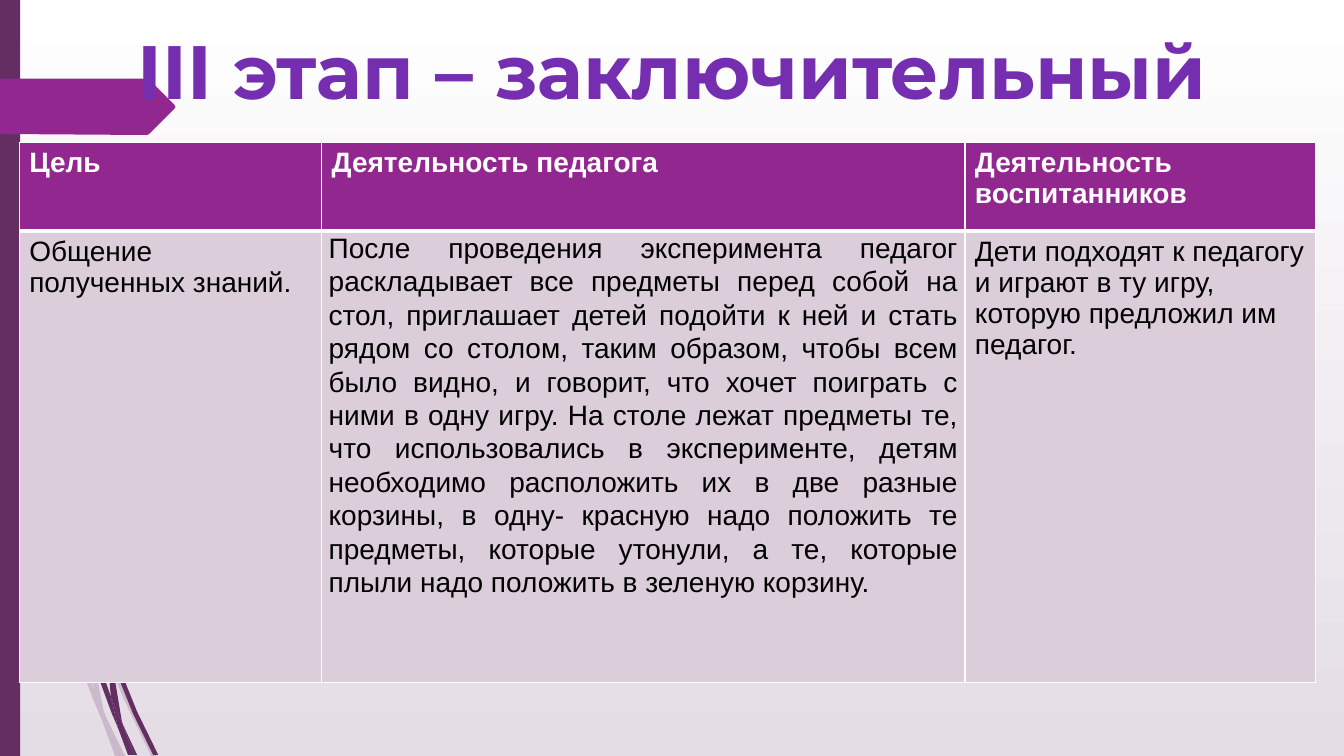
import pptx
import pptx.dml.color
import pptx.enum.shapes
import pptx.enum.text
import pptx.oxml
import pptx.oxml.ns
import pptx.util
from pptx.util import Inches

PLUM, MAGENTA, LILAC, WHITE = "632E62", "92278F", "DCCDDB", "FFFFFF"


def paint(fill, color, alpha=None):
    fill.solid()
    fill.fore_color.rgb = pptx.dml.color.RGBColor.from_string(color)
    if alpha:
        clr = fill._xPr.find(".//" + pptx.oxml.ns.qn("a:srgbClr"))
        clr.append(pptx.oxml.parse_xml(
            f'<a:alpha {pptx.oxml.ns.nsdecls("a")} val="{alpha * 1000}"/>'))


def write(tf, text, size=20, font="Arial", color="000000", bold=False,
          align="LEFT", spacing=None):
    tf.word_wrap = True
    p = tf.paragraphs[0]
    p.alignment = getattr(pptx.enum.text.PP_ALIGN, align)
    if spacing:
        p.line_spacing = spacing
    r = p.add_run()
    r.text = text
    r.font.size = pptx.util.Pt(size)
    r.font.name = font
    r.font.bold = bold
    paint(r.font.fill, color)


prs = pptx.Presentation()
prs.slide_width, prs.slide_height = Inches(13.33), Inches(7.5)
s = prs.slides.add_slide(prs.slide_layouts[6])

bg = s.background.fill
bg.gradient()
bg.gradient_angle = 270
for stop, color in zip(bg.gradient_stops, (WHITE, "E4DDE6")):
    stop.color.rgb = pptx.dml.color.RGBColor.from_string(color)

light_stems = [
    [(0.92, 6.07), (0.88, 5.96), (0.88, 6.1), (1.23, 6.94), (1.5, 7.5), (1.55, 7.5), (1.27, 6.92)],
    [(1.19, 7.5), (1.24, 7.5), (1.05, 7.11)],
    [(0.93, 6.83), (0.7, 6.19), (0.31, 4.69), (0.17, 3.76), (0.11, 3.5), (0.28, 4.7),
     (0.65, 6.21), (0.92, 6.93), (1.01, 7.14), (0.99, 7.07)],
    [(0.84, 5.99), (0.87, 6.46), (0.93, 6.83), (0.96, 6.92), (1.05, 7.11), (1.03, 7.06),
     (0.91, 6.46), (0.88, 6.1), (0.88, 6.08)],
    [(1.01, 7.14), (1.14, 7.5), (1.19, 7.5)],
    [(0.96, 6.92), (0.93, 6.83), (0.99, 7.07), (1.01, 7.14), (1.19, 7.5), (1.05, 7.11)],
]
dark_stems = [
    [(1.13, 6.49), (1.1, 6.41), (1.11, 6.56), (1.32, 7.08), (1.52, 7.49), (1.57, 7.49), (1.36, 7.06)],
    [(0.57, 4.77), (0.68, 5.57), (0.93, 6.59), (1.11, 7.08), (1.17, 7.22), (1.16, 7.17),
     (1.1, 6.91), (0.98, 6.57), (0.72, 5.56), (0.64, 5.05)],
    [(1.33, 7.49), (1.36, 7.49), (1.22, 7.19)],
    [(1.17, 7.22), (1.27, 7.49), (1.31, 7.49)],
    [(1.06, 6.45), (1.1, 6.91), (1.16, 7.06), (1.22, 7.19), (1.21, 7.16), (1.11, 6.56), (1.09, 6.51)],
    [(1.16, 7.06), (1.1, 6.91), (1.16, 7.17), (1.17, 7.22), (1.3, 7.49), (1.33, 7.49), (1.22, 7.19)],
]
side_bar = [(0, 0), (0.2, 0), (0.2, 7.5), (0, 7.5)]
arrow = [(0, 0.78), (1.46, 0.78), (1.48, 0.79), (1.73, 1.04), (1.74, 1.06), (1.73, 1.08),
         (1.48, 1.33), (1.46, 1.34), (0, 1.33)]

outlines = [(stem, PLUM, 20) for stem in light_stems]
outlines += [(stem, PLUM, None) for stem in dark_stems]
outlines.append((arrow, MAGENTA, None))
for points, color, alpha in outlines:
    (x, y), *rest = [(Inches(px), Inches(py)) for px, py in points]
    builder = s.shapes.build_freeform(x, y)
    builder.add_line_segments(rest, close=True)
    sp = builder.convert_to_shape()
    sp.shadow.inherit = False
    sp.line.fill.background()
    paint(sp.fill, color, alpha)

bar = s.shapes.add_shape(pptx.enum.shapes.MSO_SHAPE.RECTANGLE, 0, 0, Inches(0.2), Inches(7.5))
bar.shadow.inherit = False
bar.line.fill.background()
paint(bar.fill, PLUM)
s.shapes._spTree.remove(sp._element)
s.shapes._spTree.append(sp._element)

title = s.shapes.add_textbox(Inches(0.19), Inches(0.19), Inches(12.95), Inches(1.23))
write(title.text_frame, "III этап – заключительный", size=54, font="Montserrat",
      color="762EB1", bold=True, align="CENTER")

rows = [
    ["Цель", "Деятельность педагога", "Деятельность воспитанников"],
    ["Общение полученных знаний.",
     "После проведения эксперимента педагог раскладывает все предметы перед собой на стол, "
     "приглашает детей подойти к ней и стать рядом со столом, таким образом, чтобы всем было "
     "видно, и говорит, что хочет поиграть с ними в одну игру. На столе лежат предметы те, что "
     "использовались в эксперименте, детям необходимо расположить их в две разные корзины, в "
     "одну- красную надо положить те предметы, которые утонули, а те, которые плыли надо "
     "положить в зеленую корзину.",
     "Дети подходят к педагогу и играют в ту игру, которую предложил им педагог."],
]
table = s.shapes.add_table(2, 3, Inches(0.19), Inches(1.41), Inches(12.86), Inches(5.36)).table
table.horz_banding = False
for column, width in zip(table.columns, (3, 6.38, 3.48)):
    column.width = Inches(width)
for row, height in zip(table.rows, (0.88, 4.48)):
    row.height = Inches(height)

for i, texts in enumerate(rows):
    header = i == 0
    for j, text in enumerate(texts):
        cell = table.cell(i, j)
        story = not header and j == 1
        if story:
            cell.margin_left = cell.margin_right = Inches(0.07)
            cell.margin_top = cell.margin_bottom = 0
        write(cell.text_frame, text, color=WHITE if header else "000000", bold=header,
              align="JUSTIFY" if story else "LEFT", spacing=1.07 if story else None)
        tcPr = cell._tc.get_or_add_tcPr()
        for side in "LRTB":
            thick = (header and side == "B") or (not header and side == "T")
            width = pptx.util.Pt(3 if thick else 1)
            tcPr.append(pptx.oxml.parse_xml(
                f'<a:ln{side} {pptx.oxml.ns.nsdecls("a")} w="{width}"><a:solidFill>'
                f'<a:srgbClr val="{WHITE}"/></a:solidFill></a:ln{side}>'))
        paint(cell.fill, MAGENTA if header else LILAC)

prs.save("out.pptx")
